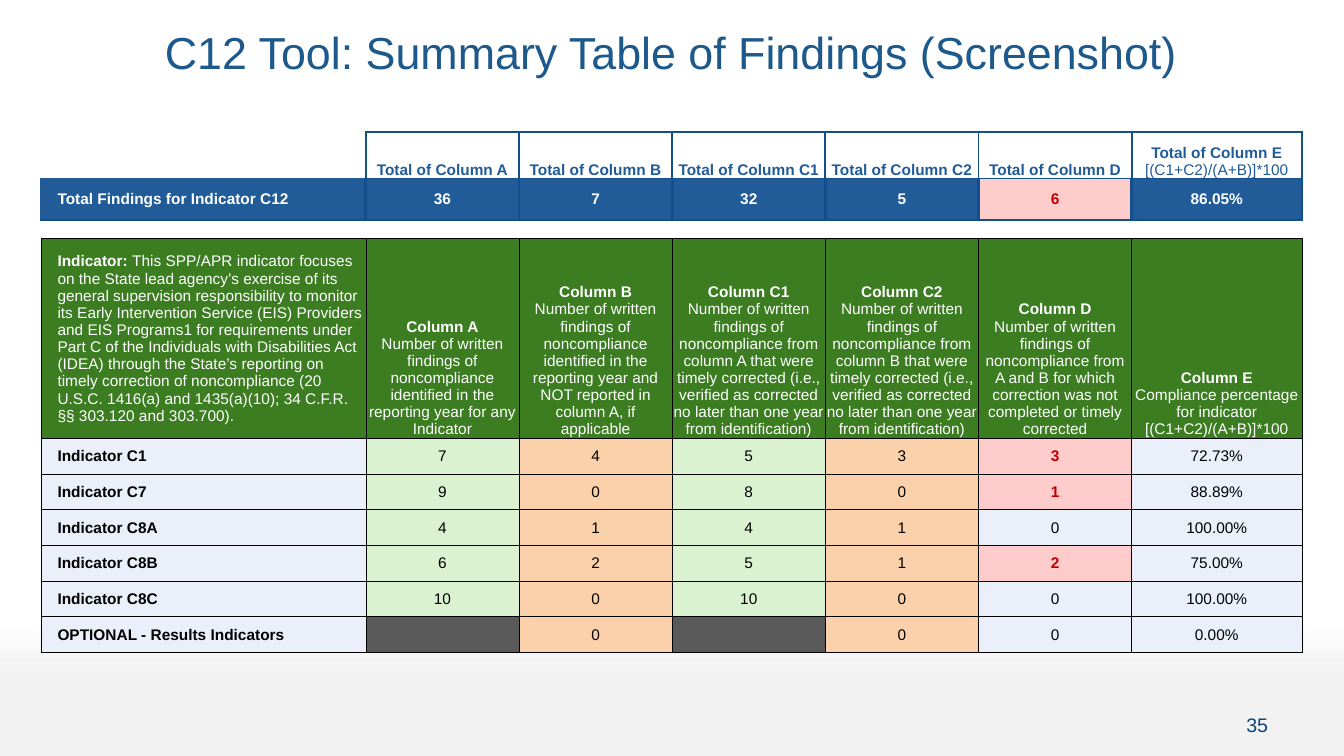
from dataclasses import dataclass, field

from lxml.etree import SubElement
from pptx import Presentation
from pptx.dml.color import RGBColor
from pptx.enum.text import MSO_ANCHOR as Anchor, PP_ALIGN as Align
from pptx.oxml import parse_xml
from pptx.oxml.ns import nsdecls, qn
from pptx.slide import Slide
from pptx.table import Table, _Cell as TableCell
from pptx.text.text import _Paragraph as Paragraph
from pptx.util import Cm, Pt

FONT = "Arial"
BLUE, NAVY, GREEN, RED = "215C98", "134F8B", "3C7D22", "C00000"
WHITE, BLACK, GREY = "FFFFFF", "000000", "595959"
PALE, MINT, PEACH, PINK = "EAEFFA", "DAF2D0", "FBD1AB", "FFCCCC"

COLUMN_WIDTHS = [8.18] + [3.86] * 5 + [4.29]
ROW_HEIGHTS = [1.17, 1.04, 0.47, 5.03] + [0.9] * 6
FORMULA = "[(C1+C2)/(A+B)]*100"
THIN, MEDIUM, THICK = (BLACK, 0.5), (NAVY, 1.5), (NAVY, 2.25)

TOTALS = ["36", "7", "32", "5", "6", "86.05%"]
INDICATOR_TEXT = (
    "This SPP/APR indicator focuses on the State lead agency’s exercise of its general "
    "supervision responsibility to monitor its Early Intervention Service (EIS) Providers "
    "and EIS Programs1 for requirements under Part C of the Individuals with Disabilities "
    "Act (IDEA) through the State’s reporting on timely correction of noncompliance (20 "
    "U.S.C. 1416(a) and 1435(a)(10); 34 C.F.R. §§ 303.120 and 303.700)."
)
FINDINGS = "Number of written findings of noncompliance "
TIMELY = (" that were timely corrected (i.e., verified as corrected no later than one year "
          "from identification)")
COLUMNS = {
    "A": FINDINGS + "identified in the reporting year for any Indicator",
    "B": FINDINGS + "identified in the reporting year and NOT reported in column A, "
                    "if applicable",
    "C1": FINDINGS + "from column A" + TIMELY,
    "C2": FINDINGS + "from column B" + TIMELY,
    "D": FINDINGS + "from A and B for which correction was not completed or timely corrected",
    "E": "Compliance percentage for indicator\n" + FORMULA,
}
INDICATORS = {
    "Indicator C1": ["7", "4", "5", "3", "3", "72.73%"],
    "Indicator C7": ["9", "0", "8", "0", "1", "88.89%"],
    "Indicator C8A": ["4", "1", "4", "1", "0", "100.00%"],
    "Indicator C8B": ["6", "2", "5", "1", "2", "75.00%"],
    "Indicator C8C": ["10", "0", "10", "0", "0", "100.00%"],
    "OPTIONAL - Results Indicators": ["", "0", "", "0", "0", "0.00%"],
}
COUNT_FILLS = [MINT, PEACH, MINT, PEACH, PALE, PALE]
OVERDUE = 4  # position of column D among the counts


@dataclass
class Entry:
    """One table cell: a bold part, then a regular part."""
    bold: str = ""
    regular: str = ""
    colour: str = BLACK
    fill: str = ""
    anchor: Anchor = Anchor.MIDDLE
    borders: dict[str, tuple[str, float]] = field(
        default_factory=lambda: dict.fromkeys("LRTB", THIN))


def rgb(colour: str) -> RGBColor:
    return RGBColor.from_string(colour)


def add_span(para: Paragraph, text: str, size: float, colour: str, bold: bool = False) -> None:
    for index, line in enumerate(text.split("\n")):
        if index:
            para.add_line_break()
        if not line:
            continue
        span = para.add_run()
        span.text = line
        for name, value in {"name": FONT, "size": Pt(size), "bold": bold}.items():
            setattr(span.font, name, value)
        span.font.color.rgb = rgb(colour)


def add_text(page: Slide, text: str, place: tuple[float, float, float, float], size: float,
             colour: str, align: Align, anchor: Anchor, spacing: float = 1.0) -> None:
    box = page.shapes.add_textbox(*map(Cm, place))
    box.text_frame.word_wrap = True
    box.text_frame.vertical_anchor = anchor
    para = box.text_frame.paragraphs[0]
    para.alignment, para.line_spacing = align, spacing
    add_span(para, text, size, colour)


def set_borders(cell: TableCell, borders: dict[str, tuple[str, float]]) -> None:
    """Draw the listed sides and clear the others."""
    properties = cell._tc.get_or_add_tcPr()
    for index, side in enumerate("LRTB"):
        colour, width = borders.get(side, ("", 0))
        paint = (f'<a:solidFill><a:srgbClr val="{colour}"/></a:solidFill>'
                 if colour else "<a:noFill/>")
        line = f'<a:ln{side} {nsdecls("a")} w="{Pt(width)}">{paint}</a:ln{side}>'
        properties.insert(index, parse_xml(line))


def fill_cell(cell: TableCell, entry: Entry, is_label: bool) -> None:
    format_values = {
        "margin_left": Cm(0.41 if is_label else 0.02),
        "margin_right": Cm(0.02),
        "margin_top": Cm(0.02),
        "margin_bottom": 0,
        "vertical_anchor": entry.anchor,
    }
    for name, value in format_values.items():
        setattr(cell, name, value)
    if entry.fill:
        cell.fill.solid()
        cell.fill.fore_color.rgb = rgb(entry.fill)
    else:
        cell.fill.background()
    set_borders(cell, entry.borders)
    para = cell.text_frame.paragraphs[0]
    para.alignment = Align.LEFT if is_label else Align.CENTER
    add_span(para, entry.bold, 11, entry.colour, True)
    add_span(para, entry.regular, 11, entry.colour)
    if not entry.bold + entry.regular:
        SubElement(para._p, qn("a:endParaRPr"), sz="800")


def total_rows() -> list[list[Entry]]:
    headings = [Entry(borders={"R": MEDIUM, "B": (BLUE, 1.5)})]
    for name in COLUMNS:
        is_last = name == "E"
        headings.append(Entry(f"Total of Column {name}" + "\n" * is_last, FORMULA * is_last,
                              BLUE, anchor=Anchor.BOTTOM,
                              borders=dict.fromkeys("LRTB", MEDIUM)))
    edge = (BLUE, 1.5)
    totals = [Entry("Total Findings for Indicator C12", "", WHITE, BLUE,
                    borders={"L": edge, "T": edge, "R": THICK, "B": MEDIUM})]
    for index, total in enumerate(TOTALS):
        colour, fill = (RED, PINK) if index == OVERDUE else (WHITE, BLUE)
        totals.append(Entry(total, "", colour, fill,
                            borders={"L": THICK, "T": MEDIUM, "R": THICK, "B": MEDIUM}))
    gap = [Entry(borders={"T": MEDIUM, "B": THIN}) for _ in COLUMN_WIDTHS]
    return [headings, totals, gap]


def indicator_rows() -> list[list[Entry]]:
    headings = [Entry("Indicator: ", INDICATOR_TEXT, WHITE, GREEN)]
    headings += [Entry(f"Column {name}\n", text, WHITE, GREEN, Anchor.BOTTOM)
                 for name, text in COLUMNS.items()]
    rows = [headings]
    for label, counts in INDICATORS.items():
        row = [Entry(label, fill=PALE)]
        for index, (count, fill) in enumerate(zip(counts, COUNT_FILLS)):
            if index == OVERDUE and count != "0":
                row.append(Entry(count, "", RED, PINK))
            else:
                row.append(Entry("", count, fill=fill if count else GREY))
        rows.append(row)
    return rows


def add_summary(page: Slide) -> Table:
    rows = total_rows() + indicator_rows()
    table = page.shapes.add_table(len(rows), len(COLUMN_WIDTHS), Cm(1.04), Cm(3.33),
                                  Cm(sum(COLUMN_WIDTHS)), Cm(sum(ROW_HEIGHTS))).table
    table.first_row = table.horz_banding = False
    for column, width in zip(table.columns, COLUMN_WIDTHS):
        column.width = Cm(width)
    for row, height, entries in zip(table.rows, ROW_HEIGHTS, rows):
        row.height = Cm(height)
        for index, (cell, entry) in enumerate(zip(row.cells, entries)):
            fill_cell(cell, entry, is_label=index == 0)
    return table


def set_background(page: Slide) -> None:
    fill = page.background.fill
    fill.gradient()
    fill.gradient_angle = 270
    for stop, (position, colour) in zip(fill.gradient_stops, [(0.82, WHITE), (0.89, "F2F2F2")]):
        stop.position = position
        stop.color.rgb = rgb(colour)


def main() -> None:
    deck = Presentation()
    deck.slide_width, deck.slide_height = Cm(33.87), Cm(19.05)
    page = deck.slides.add_slide(deck.slide_layouts[6])
    set_background(page)
    add_text(page, "C12 Tool: Summary Table of Findings (Screenshot)", (1.63, 0.64, 30.58, 2.54),
             32, "1D598B", Align.CENTER, Anchor.TOP, 0.9)
    add_summary(page)
    add_text(page, "35", (28.78, 17.55, 3.43, 1.4), 14, "104578", Align.RIGHT, Anchor.MIDDLE)
    deck.save("out.pptx")


if __name__ == "__main__":
    main()
